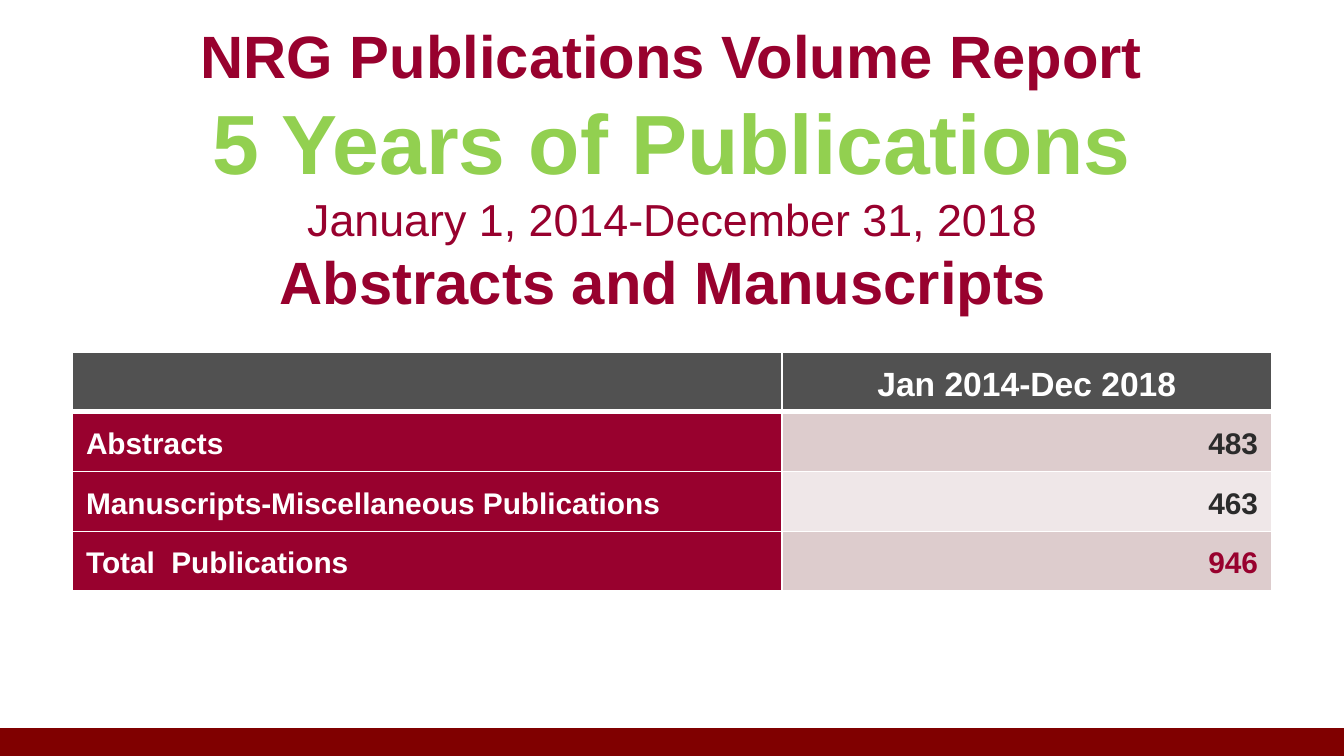
from lxml.etree import SubElement
from pptx import Presentation
from pptx.dml.color import RGBColor
from pptx.enum.shapes import MSO_SHAPE as SHAPE
from pptx.enum.text import MSO_ANCHOR as ANCHOR, MSO_AUTO_SIZE as FIT, PP_ALIGN as ALIGN
from pptx.oxml.ns import qn
from pptx.util import Inches, Pt

W = Inches(10)
H = W * 9 // 16
CRIMSON, GREEN, WHITE = "98012E", "92D050", "FFFFFF"
GRAY, DARK, ROSE, PALE = "515151", "2B2B2B", "DDCCCD", "EFE7E8"

TITLE = [
    [("NRG Publications Volume Report", 32, CRIMSON, True),
     ("5 Years of Publications", 45, GREEN, True)],
    [("January 1, 2014-December 31, 2018", 24, CRIMSON, False),
     ("Abstracts and Manuscripts ", 32, CRIMSON, True)],
]
COUNTS = [
    ("Abstracts", "483", DARK, ROSE),
    ("Manuscripts-Miscellaneous Publications", "463", DARK, PALE),
    ("Total  Publications", "946", CRIMSON, ROSE),
]


def paint(target, color):
    target.solid()
    target.fore_color.rgb = RGBColor.from_string(color)


def add_run(p, text, size, color, bold=True):
    r = p.add_run()
    r.text = text
    fmt = {"name": "Arial", "size": Pt(size), "bold": bold}
    for key, value in fmt.items():
        setattr(r.font, key, value)
    paint(r.font.fill, color)


def add_bar(s):
    top = int(H * 0.963)
    sp = s.shapes.add_shape(SHAPE.RECTANGLE, 0, top, W, H - top)
    sp.shadow.inherit = False
    paint(sp.fill, "800000")
    sp.line.fill.background()


def add_title(s):
    tf = s.shapes.add_textbox(0, int(H * 0.016), W, int(H * 0.416)).text_frame
    tf.word_wrap = True
    tf.auto_size = FIT.SHAPE_TO_FIT_TEXT
    for i, lines in enumerate(TITLE):
        p = tf.add_paragraph() if i else tf.paragraphs[0]
        p.alignment = ALIGN.CENTER
        for j, line in enumerate(lines):
            if j:
                p.add_line_break()
            add_run(p, *line)


def set_borders(cell, widths):
    tc_pr = cell._tc.get_or_add_tcPr()
    for i, (side, width) in enumerate(widths.items()):
        ln = SubElement(tc_pr, qn(f"a:ln{side}"), w=str(Pt(width)))
        fill = SubElement(ln, qn("a:solidFill"))
        SubElement(fill, qn("a:srgbClr"), val=WHITE)
        tc_pr.insert(i, ln)


def fill_cell(cell, text, size, color, fill, align):
    cell.vertical_anchor = ANCHOR.MIDDLE
    paint(cell.fill, fill)
    p = cell.text_frame.paragraphs[0]
    p.alignment = align
    p.line_spacing = 1.15
    if text:
        add_run(p, text, size, color)


def add_counts(s):
    rows = [[("", 18, WHITE, GRAY, ALIGN.LEFT),
             ("Jan 2014-Dec 2018", 18, WHITE, GRAY, ALIGN.CENTER)]]
    rows += [[(label, 16, WHITE, CRIMSON, ALIGN.LEFT),
              (count, 16, color, fill, ALIGN.RIGHT)]
             for label, count, color, fill in COUNTS]
    table = s.shapes.add_table(len(rows), 2, int(W * 0.054), int(H * 0.466),
                               int(W * 0.892), int(H * 0.316)).table
    for column, share in zip(table.columns, (0.528, 0.364)):
        column.width = int(W * share)
    for i, row in enumerate(rows):
        for j, content in enumerate(row):
            cell = table.cell(i, j)
            fill_cell(cell, *content)
            set_borders(cell, {"L": 1, "R": 1, "T": 3 if i == 1 else 1,
                               "B": 3 if i == 0 else 1})


def main():
    prs = Presentation()
    prs.slide_width, prs.slide_height = W, H
    s = prs.slides.add_slide(prs.slide_layouts[6])
    add_bar(s)
    add_counts(s)
    add_title(s)
    prs.save("out.pptx")


if __name__ == "__main__":
    main()
